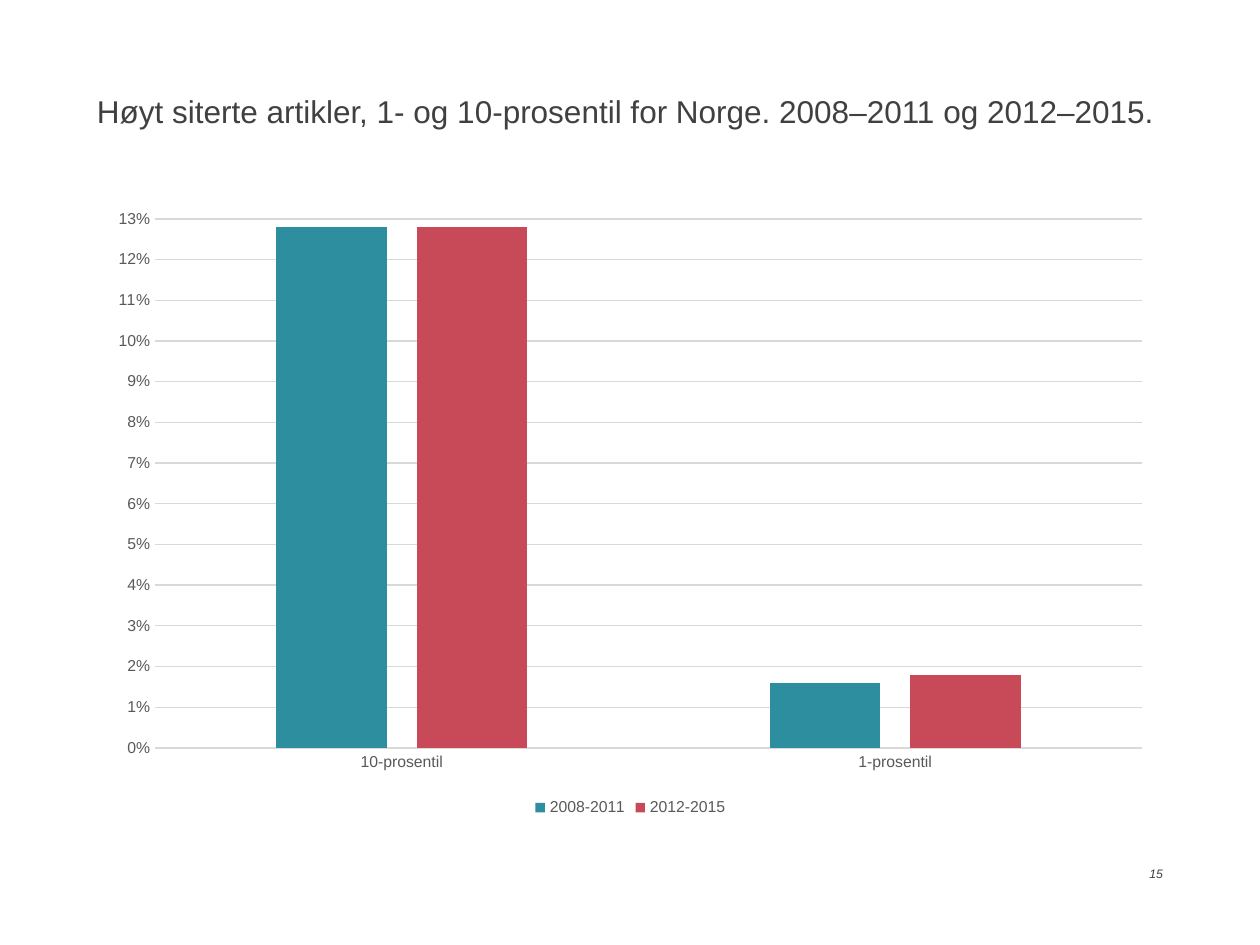
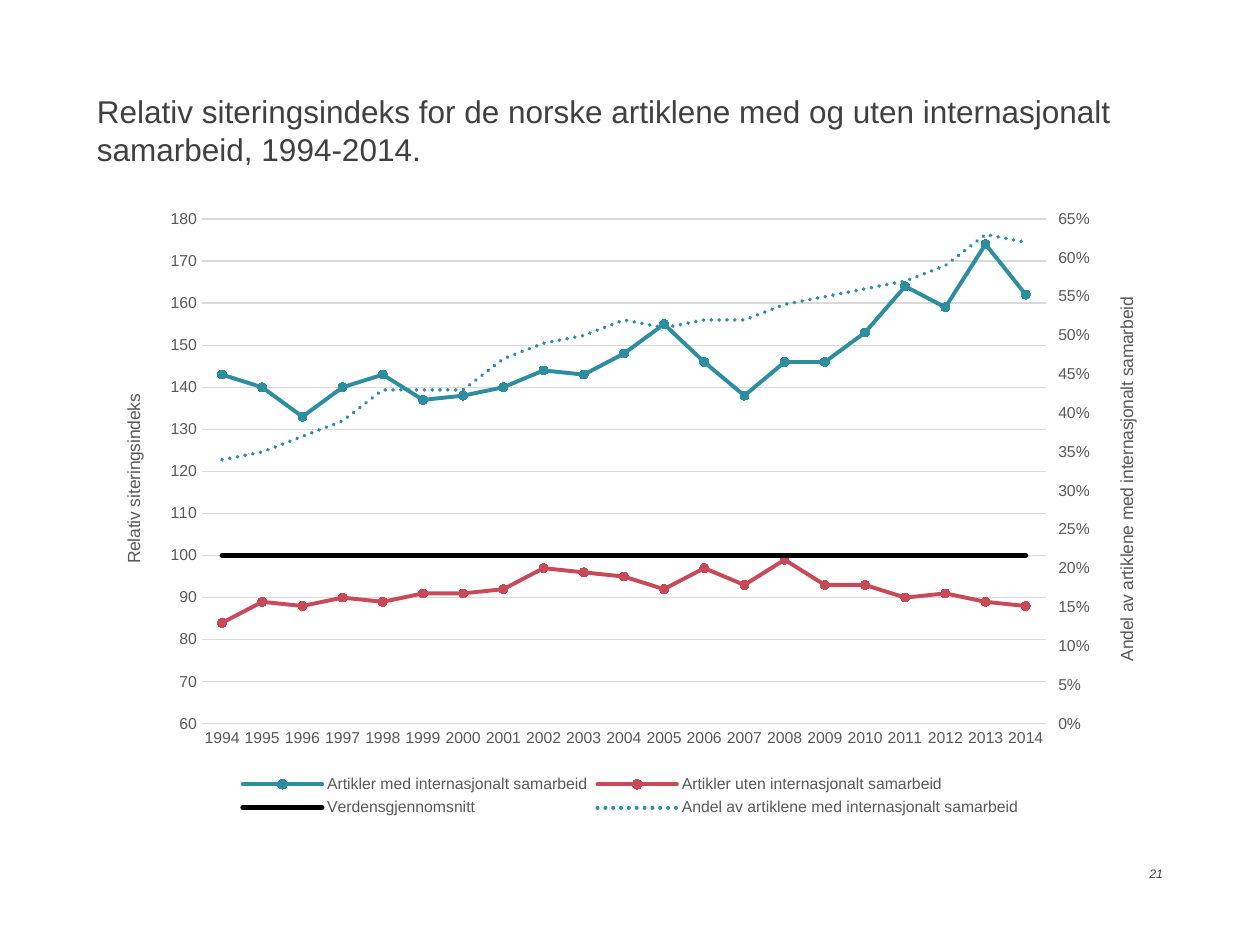
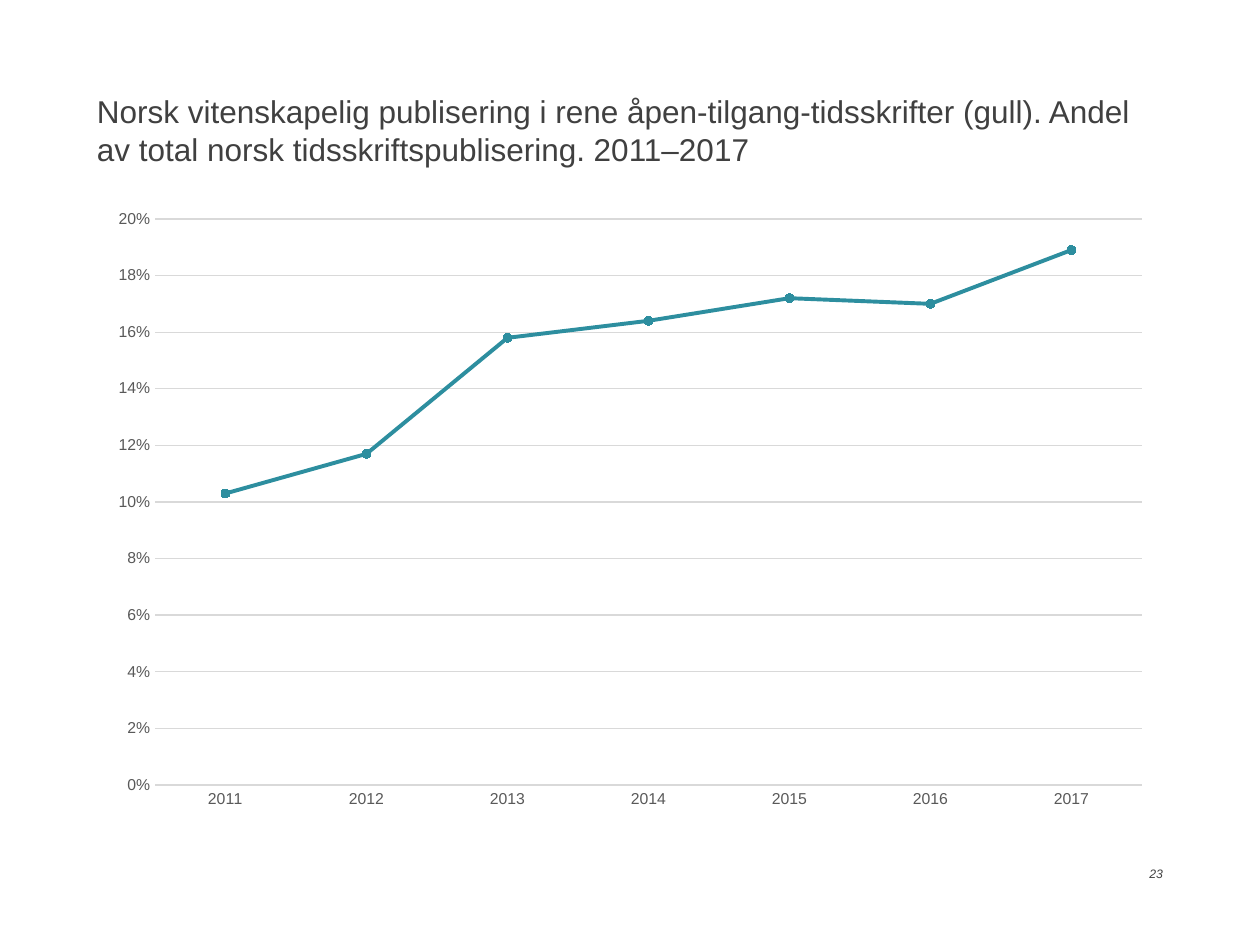
from copy import deepcopy

from pptx import Presentation
from pptx.chart.axis import CategoryAxis, ValueAxis
from pptx.chart.data import CategoryChartData
from pptx.dml.color import RGBColor
from pptx.enum.chart import XL_CHART_TYPE as ChartType
from pptx.enum.chart import XL_LEGEND_POSITION as LegendPosition
from pptx.enum.chart import XL_MARKER_STYLE as MarkerStyle
from pptx.enum.chart import XL_TICK_MARK as TickMark
from pptx.enum.dml import MSO_LINE_DASH_STYLE as Dash
from pptx.enum.text import MSO_ANCHOR as Anchor
from pptx.enum.text import PP_ALIGN as Align
from pptx.oxml import parse_xml
from pptx.oxml.ns import nsdecls, qn
from pptx.util import Pt

SCALE = 914400 / 126
FONT = "Arial"
COLORS = {
    "text": "404040",
    "label": "595959",
    "grid": "D9D9D9",
    "teal": "2D8E9F",
    "red": "C84957",
    "black": "000000",
}
CHART_BOX = (97, 198, 1067, 624)


def emu(px):
    return round(px * SCALE)


def color(name):
    return RGBColor.from_string(COLORS[name])


class Deck:
    def __init__(self):
        self.presentation = Presentation()
        self.presentation.slide_width = emu(1260)
        self.presentation.slide_height = emu(945)
        self.slide = None

    def style_font(self, font, size, name="label", italic=False):
        font.name = FONT
        font.size = Pt(size)
        font.bold = False
        font.italic = italic
        font.color.rgb = color(name)

    def add_slide(self, title, number):
        layout = self.presentation.slide_layouts[6]
        self.slide = self.presentation.slides.add_slide(layout)
        self.add_text(title, (97, 92, 1066, 50), 18)
        self.add_text(number, (1116, 866, 47, 15), 7, True, Align.RIGHT, Anchor.MIDDLE)

    def add_text(self, text, box, size, italic=False, align=Align.LEFT, anchor=Anchor.TOP):
        shape = self.slide.shapes.add_textbox(*map(emu, box))
        frame = shape.text_frame
        frame.word_wrap = True
        frame.vertical_anchor = anchor
        frame.margin_left = frame.margin_top = 0
        frame.margin_right = frame.margin_bottom = 0
        frame.text = text
        paragraph = frame.paragraphs[0]
        paragraph.alignment = align
        self.style_font(paragraph.runs[0].font, size, "text", italic)

    def add_chart(self, kind, categories, series, plot_box, number_format="0%", legend=True):
        data = CategoryChartData(number_format=number_format)
        data.categories = categories
        for name, values in series:
            data.add_series(name, values)
        chart = self.slide.shapes.add_chart(kind, *map(emu, CHART_BOX), data).chart
        chart.has_title = False
        self.style_font(chart.font, 10, "black")
        chart.plots[0].vary_by_categories = False
        chart.has_legend = legend
        if legend:
            chart.legend.position = LegendPosition.BOTTOM
            chart.legend.include_in_layout = False
            self.style_font(chart.legend.font, 9)
        axis = chart.category_axis
        axis.major_tick_mark = axis.minor_tick_mark = TickMark.NONE
        self.style_line(axis.format.line, "grid", 0.75)
        self.style_font(axis.tick_labels.font, 9)
        self.place(chart.plots[0]._element.getparent(), plot_box, True)
        return chart

    def place(self, parent, box, inner=False):
        left, top, width, height = CHART_BOX
        parts = {"x": (box[0] - left) / width, "y": (box[1] - top) / height}
        if inner:
            parts |= {"w": box[2] / width, "h": box[3] / height}
        target = '<c:layoutTarget val="inner"/>' if inner else ""
        modes = "".join(f'<c:{key}Mode val="edge"/>' for key in "xy")
        sizes = "".join(f'<c:{key} val="{value:.4f}"/>' for key, value in parts.items())
        layout = parse_xml(
            f'<c:layout {nsdecls("c")}><c:manualLayout>{target}{modes}{sizes}'
            "</c:manualLayout></c:layout>"
        )
        current = parent.find(qn("c:layout"))
        if current is None:
            parent.insert(0, layout)
        else:
            parent.replace(current, layout)

    def style_line(self, line, name, width):
        line.color.rgb = color(name)
        line.width = Pt(width)

    def style_value_axis(self, axis, low, high, step, number_format="0%",
                         grid=True, tick=TickMark.NONE):
        axis.minimum_scale, axis.maximum_scale, axis.major_unit = low, high, step
        axis.major_tick_mark, axis.minor_tick_mark = tick, TickMark.NONE
        axis.format.line.fill.background()
        axis.tick_labels.number_format = number_format
        axis.tick_labels.number_format_is_linked = False
        self.style_font(axis.tick_labels.font, 9)
        axis.has_major_gridlines = grid
        if grid:
            self.style_line(axis.major_gridlines.format.line, "grid", 0.75)

    def add_axis_title(self, axis, text, position):
        title = axis.axis_title
        frame = title.text_frame
        frame.text = text
        self.style_font(frame.paragraphs[0].runs[0].font, 10)
        body = frame._txBody.find(qn("a:bodyPr"))
        body.set("rot", "-5400000")
        body.set("vert", "horz")
        self.place(title._element, position)

    def style_line_series(self, series, name, width=2.25, marker=True, dash=None):
        series.smooth = False
        line = series.format.line
        self.style_line(line, name, width)
        if dash:
            line.dash_style = dash
        series._element.xpath("c:spPr/a:ln")[0].set("cap", "rnd")
        series.marker.style = MarkerStyle.CIRCLE if marker else MarkerStyle.NONE
        if marker:
            series.marker.size = 5
            series.marker.format.fill.solid()
            series.marker.format.fill.fore_color.rgb = color(name)
            self.style_line(series.marker.format.line, name, 0.75)

    def move_last_series_right(self, chart):
        primary = chart.plots[0]._element
        primary_value = chart.value_axis._element
        secondary = deepcopy(primary)
        for series in secondary.findall(qn("c:ser"))[:-1]:
            secondary.remove(series)
        primary.remove(primary.findall(qn("c:ser"))[-1])
        primary.addnext(secondary)
        category = deepcopy(chart.category_axis._element)
        value = deepcopy(primary_value)
        primary_value.addnext(value)
        value.addnext(category)
        ids = {axis.find(qn("c:axId")).get("val"): new
               for axis, new in ((category, "5001"), (value, "5002"))}
        for element in (secondary, category, value):
            for reference in element.xpath("c:axId | c:crossAx"):
                reference.set("val", ids[reference.get("val")])
        value.find(qn("c:axPos")).set("val", "r")
        value.find(qn("c:crosses")).set("val", "max")
        CategoryAxis(category).visible = False
        return ValueAxis(value)


def add_highly_cited(deck):
    deck.add_slide("Høyt siterte artikler, 1- og 10-prosentil for Norge. 2008–2011 og 2012–2015.", "15")
    periods = [("2008-2011", (0.128, 0.016)), ("2012-2015", (0.128, 0.018))]
    chart = deck.add_chart(ChartType.COLUMN_CLUSTERED, ["10-prosentil", "1-prosentil"],
                           periods, (155, 219, 987, 529))
    deck.style_value_axis(chart.value_axis, 0, 0.13, 0.01)
    plot = chart.plots[0]
    plot.gap_width, plot.overlap = 219, -27
    for series, name in zip(plot.series, ("teal", "red")):
        series.format.fill.solid()
        series.format.fill.fore_color.rgb = color(name)


def add_citation_index(deck):
    deck.add_slide("Relativ siteringsindeks for de norske artiklene med og uten "
                   "internasjonalt samarbeid, 1994-2014.", "21")
    years = [str(year) for year in range(1994, 2015)]
    share = "Andel av artiklene med internasjonalt samarbeid"
    indices = [
        ("Artikler med internasjonalt samarbeid",
         (143, 140, 133, 140, 143, 137, 138, 140, 144, 143, 148,
          155, 146, 138, 146, 146, 153, 164, 159, 174, 162)),
        ("Artikler uten internasjonalt samarbeid",
         (84, 89, 88, 90, 89, 91, 91, 92, 97, 96, 95,
          92, 97, 93, 99, 93, 93, 90, 91, 89, 88)),
        ("Verdensgjennomsnitt", [100] * len(years)),
        (share,
         (0.34, 0.35, 0.37, 0.39, 0.43, 0.43, 0.43, 0.47, 0.49, 0.5, 0.52,
          0.51, 0.52, 0.52, 0.54, 0.55, 0.56, 0.57, 0.59, 0.63, 0.62)),
    ]
    chart = deck.add_chart(ChartType.LINE_MARKERS, years, indices,
                           (202, 219, 844, 505), "General")
    index_axis = chart.value_axis
    share_axis = deck.move_last_series_right(chart)
    deck.style_value_axis(index_axis, 60, 180, 10, "General")
    deck.style_value_axis(share_axis, 0, 0.65, 0.05, grid=False, tick=TickMark.OUTSIDE)
    deck.add_axis_title(index_axis, "Relativ siteringsindeks", (119, 391))
    deck.add_axis_title(share_axis, share, (1112, 294))
    with_partners, without_partners, world = chart.plots[0].series
    deck.style_line_series(with_partners, "teal")
    deck.style_line_series(without_partners, "red")
    deck.style_line_series(world, "black", 2.75, marker=False)
    deck.style_line_series(chart.plots[1].series[0], "teal", marker=False, dash=Dash.ROUND_DOT)


def add_open_access(deck):
    deck.add_slide("Norsk vitenskapelig publisering i rene åpen-tilgang-tidsskrifter (gull). "
                   "Andel av total norsk tidsskriftspublisering. 2011–2017", "23")
    shares = (0.103, 0.117, 0.158, 0.164, 0.172, 0.17, 0.189)
    chart = deck.add_chart(ChartType.LINE_MARKERS, [str(year) for year in range(2011, 2018)],
                           [("Series 1", shares)], (155, 219, 987, 566), legend=False)
    deck.style_value_axis(chart.value_axis, 0, 0.2, 0.02)
    deck.style_line_series(chart.plots[0].series[0], "teal")


def main():
    deck = Deck()
    add_highly_cited(deck)
    add_citation_index(deck)
    add_open_access(deck)
    deck.presentation.save("out.pptx")


if __name__ == "__main__":
    main()
